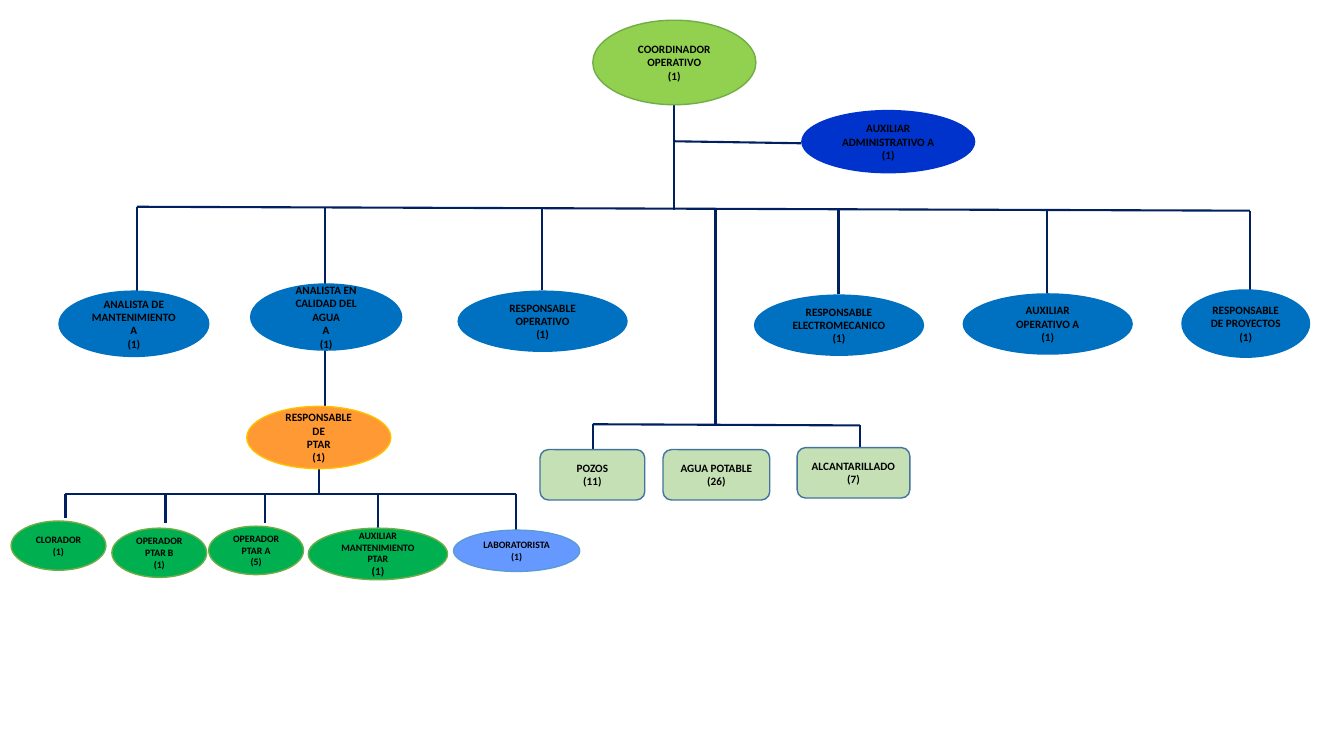
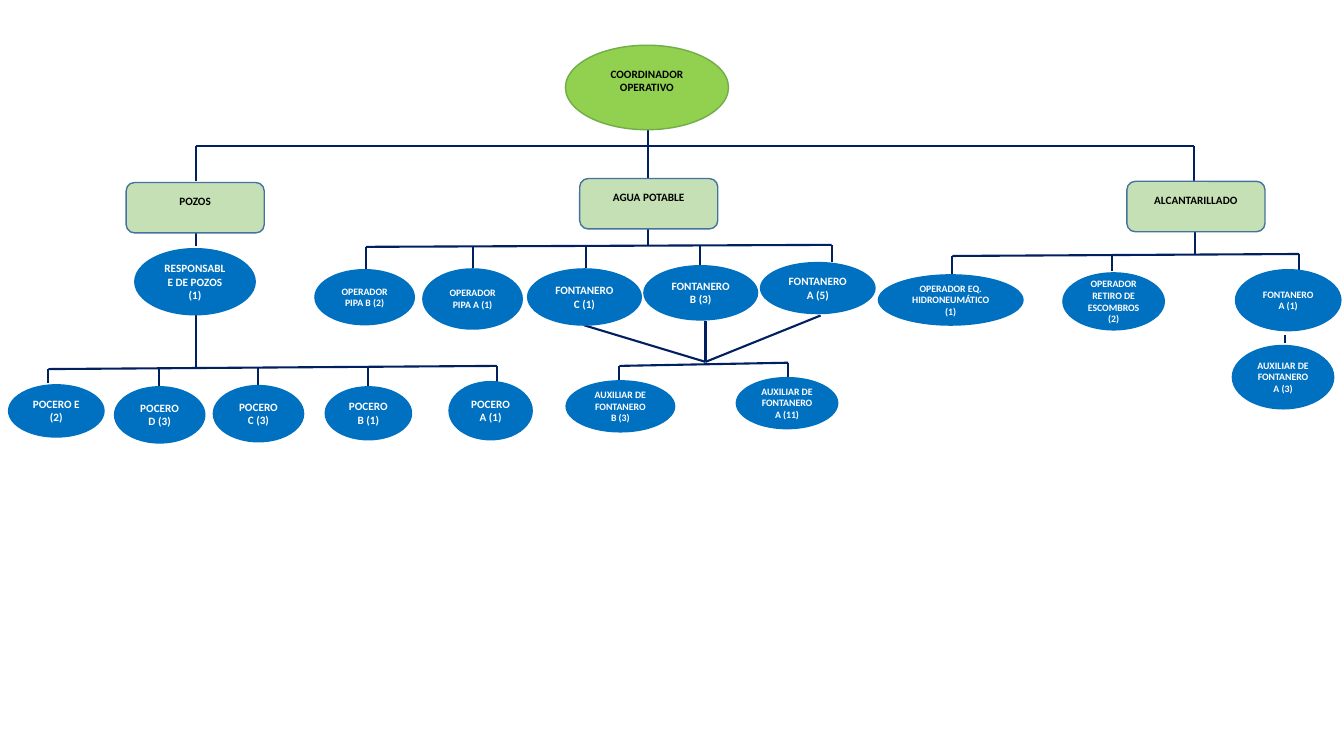
from pptx import Presentation
from pptx import util as u
from pptx.dml.color import RGBColor
from pptx.enum import shapes, text
from pptx.oxml.ns import qn
from lxml import etree

COLORS = {
    "navy": "002060", "blue": "0070C0", "royal": "0033CC", "lime": "92D050",
    "leaf": "70AD47", "orange": "FF9933", "gold": "FFC000", "green": "00B050",
    "periwinkle": "6699FF", "sky": "5B9BD5", "mint": "C5E0B4", "steel": "43739E",
    "black": "000000", "white": "FFFFFF",
}

OVAL = shapes.MSO_SHAPE.OVAL
ROUNDED = shapes.MSO_SHAPE.ROUNDED_RECTANGLE
ROLES = {
    "head": (OVAL, "lime", "leaf", "black"),
    "aide": (OVAL, "royal", None, "black"),
    "lead": (OVAL, "blue", None, "black"),
    "plant": (OVAL, "orange", "gold", "black"),
    "operator": (OVAL, "green", "leaf", "black"),
    "lab": (OVAL, "periwinkle", "sky", "black"),
    "area": (ROUNDED, "mint", "steel", "black"),
    "staff": (OVAL, "blue", None, "white"),
}


def rgb(name):
    return RGBColor.from_string(COLORS[name])


class OrgChart:
    font_name = "Calibri"
    inset = 0.13

    def __init__(self):
        self.deck = Presentation()
        self.deck.slide_width = u.Cm(33.87)
        self.deck.slide_height = u.Cm(19.05)
        self.page = None

    def new_page(self):
        self.page = self.deck.slides.add_slide(self.deck.slide_layouts[6])

    def line(self, x1, y1, x2, y2):
        link = self.page.shapes.add_connector(
            shapes.MSO_CONNECTOR.STRAIGHT, u.Cm(x1), u.Cm(y1), u.Cm(x2), u.Cm(y2))
        link.line.color.rgb = rgb("navy")
        link.line.width = u.Pt(1.5)
        etree.SubElement(link._element.spPr, qn("a:effectLst"))

    def branch(self, x1, y1, x2, y2, drops):
        self.line(x1, y1, x2, y2)
        slope = (y2 - y1) / (x2 - x1)
        for x, bottom in drops:
            self.line(x, y1 + slope * (x - x1), x, bottom)

    def node(self, role, wording, left, top, width, height, size=8, last_size=None, lift=0):
        form, fill, border, ink = ROLES[role]
        box = self.page.shapes.add_shape(
            form, u.Cm(left), u.Cm(top), u.Cm(width), u.Cm(height))
        box.shadow.inherit = False
        box.fill.solid()
        box.fill.fore_color.rgb = rgb(fill)
        if border:
            box.line.color.rgb = rgb(border)
            box.line.width = u.Pt(1)
        else:
            box.line.fill.background()
        frame = box.text_frame
        frame.word_wrap = True
        frame.vertical_anchor = text.MSO_ANCHOR.MIDDLE
        frame.margin_bottom = u.Cm(self.inset + lift)
        frame.text = wording
        for para in frame.paragraphs:
            para.alignment = text.PP_ALIGN.CENTER
            para.font.name = self.font_name
            para.font.size = u.Pt(size)
            para.font.bold = True
            para.font.color.rgb = rgb(ink)
        if last_size:
            frame.paragraphs[-1].font.size = u.Pt(last_size)

    def nodes(self, role, entries, size=8):
        for entry in entries:
            self.node(role, *entry, size=size)


def operations_page(chart):
    chart.new_page()
    chart.line(16.99, 2.64, 16.99, 5.28)
    chart.line(16.99, 3.56, 20.19, 3.61)
    chart.branch(3.45, 5.21, 31.5, 5.31, [
        (3.45, 7.34), (8.2, 7.24), (13.65, 7.32), (18.03, 10.72),
        (21.13, 7.42), (26.39, 7.39), (31.5, 7.32)])
    chart.line(8.2, 8.74, 8.2, 10.24)
    chart.line(8.04, 11.81, 8.04, 12.45)
    chart.branch(1.65, 12.45, 13, 12.45, [
        (1.65, 13.06), (4.17, 13.18), (6.68, 13.18), (9.53, 13.31), (13, 13.36)])
    chart.branch(14.94, 10.69, 21.67, 10.72, [(14.94, 11.33), (21.67, 11.3)])

    chart.node("head", "COORDINADOR\nOPERATIVO\n(1)", 14.94, 0.51, 4.11, 2.13)
    chart.node("aide", "AUXILIAR ADMINISTRATIVO A\n(1)", 20.19, 2.77, 4.39, 1.6)
    chart.nodes("lead", [
        ("ANALISTA DE MANTENIMIENTO\nA\n(1)", 1.47, 7.32, 3.81, 1.68),
        ("ANALISTA EN CALIDAD DEL AGUA\nA\n(1)", 6.3, 7.14, 3.84, 1.7),
        ("RESPONSABLE OPERATIVO\n(1)", 11.53, 7.32, 4.29, 1.55),
        ("RESPONSABLE ELECTROMECANICO\n(1)", 19, 7.42, 4.29, 1.55),
        ("AUXILIAR OPERATIVO A\n(1)", 24.26, 7.39, 4.29, 1.55),
        ("RESPONSABLE DE PROYECTOS\n(1)", 29.77, 7.29, 3.25, 1.73)])
    chart.node("plant", "RESPONSABLE\nDE\nPTAR\n(1)", 6.22, 10.24, 3.63, 1.57)
    chart.nodes("area", [
        ("POZOS\n(11)", 13.61, 11.33, 2.64, 1.27),
        ("AGUA POTABLE\n(26)", 16.71, 11.33, 2.69, 1.27),
        ("ALCANTARILLADO\n(7)", 20.09, 11.28, 2.84, 1.27)])
    chart.nodes("operator", [
        ("CLORADOR\n(1)", 0.28, 13.13, 2.39, 1.24),
        ("OPERADOR PTAR B\n(1)", 2.82, 13.31, 2.39, 1.24),
        ("OPERADOR PTAR A\n(5)", 5.26, 13.26, 2.39, 1.22)], size=7)
    chart.node("operator", "AUXILIAR MANTENIMIENTO PTAR\n(1)",
               7.77, 13.31, 3.51, 1.3, size=7, last_size=8)
    chart.node("lab", "LABORATORISTA (1)", 11.43, 13.36, 3.18, 1.04, size=7)


def areas_page(chart):
    chart.new_page()
    chart.line(16.33, 3.28, 16.33, 4.5)
    chart.branch(4.93, 3.68, 30.1, 3.68, [(4.93, 4.57), (30.1, 4.55)])
    chart.line(4.93, 5.87, 4.93, 6.2)
    chart.line(16.33, 5.77, 16.33, 6.17)
    chart.line(30.12, 5.84, 30.12, 6.43)
    chart.branch(9.22, 6.22, 20.96, 6.17, [
        (9.22, 6.78), (11.91, 6.76), (14.76, 6.76), (17.65, 6.68), (20.96, 6.6)])
    chart.branch(24, 6.45, 32.74, 6.4, [(24, 6.91), (28.02, 6.83), (32.74, 6.83)])
    chart.line(32.39, 8.43, 32.39, 8.64)
    chart.line(4.93, 7.92, 4.93, 9.27)
    chart.branch(1.22, 9.3, 12.52, 9.22, [
        (1.22, 9.65), (4.01, 9.73), (6.5, 9.7), (9.27, 9.73), (12.52, 9.68)])
    for x, y in [(14.73, 8.2), (17.78, 8.1), (20.68, 7.95)]:
        chart.line(x, y, 17.78, 9.12)
    chart.branch(15.61, 9.22, 19.86, 9.14, [(15.61, 9.58), (19.86, 9.5)])

    lift = 0.34
    chart.node("head", "COORDINADOR\nOPERATIVO", 14.25, 1.14, 4.11, 2.13, lift=lift)
    for wording, left, top in [
            ("POZOS", 3.18, 4.6), ("AGUA POTABLE", 14.61, 4.5), ("ALCANTARILLADO", 28.4, 4.57)]:
        chart.node("area", wording, left, top, 3.48, 1.27, lift=lift)
    chart.nodes("staff", [
        ("RESPONSABLE DE POZOS (1)", 3.38, 6.25, 3.07, 1.7),
        ("POCERO E (2)", 0.2, 9.68, 2.44, 1.35),
        ("POCERO D (3)", 2.87, 9.73, 2.31, 1.45),
        ("POCERO C (3)", 5.36, 9.7, 2.31, 1.45),
        ("POCERO B (1)", 8.18, 9.73, 2.21, 1.37),
        ("POCERO A (1)", 11.3, 9.6, 2.13, 1.5),
        ("FONTANERO C (1)", 13.28, 6.76, 2.9, 1.45),
        ("FONTANERO B (3)", 16.21, 6.68, 2.9, 1.4),
        ("FONTANERO A (5)", 19.15, 6.6, 2.92, 1.32)])
    chart.nodes("staff", [
        ("OPERADOR PIPA B (2)", 7.92, 6.78, 2.54, 1.42),
        ("OPERADOR PIPA A (1)", 10.64, 6.76, 2.54, 1.55),
        ("AUXILIAR DE FONTANERO B (3)", 14.25, 9.58, 2.77, 1.32),
        ("AUXILIAR DE FONTANERO A (11)", 18.54, 9.5, 2.59, 1.32),
        ("OPERADOR EQ. HIDRONEUMÁTICO (1)", 22.12, 6.91, 3.68, 1.3),
        ("OPERADOR RETIRO DE ESCOMBROS (2)", 26.77, 6.86, 2.59, 1.47),
        ("FONTANERO A (1)", 31.12, 6.78, 2.69, 1.57),
        ("AUXILIAR DE FONTANERO A (3)", 31.04, 8.69, 2.59, 1.63)], size=7)


def main():
    chart = OrgChart()
    operations_page(chart)
    areas_page(chart)
    chart.deck.save("out.pptx")


if __name__ == "__main__":
    main()
